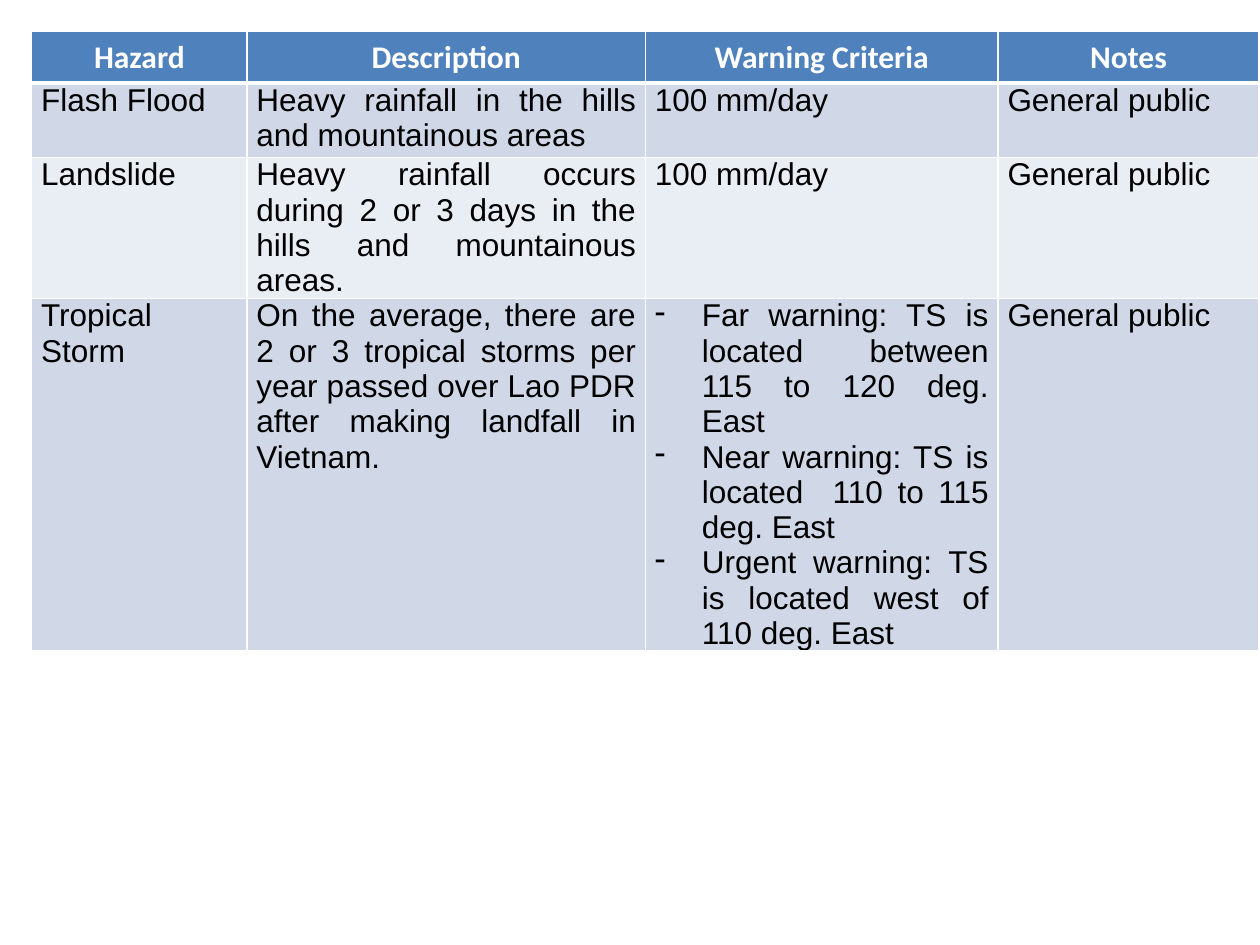
import pptx
import pptx.dml.color
import pptx.enum.text
import pptx.oxml
import pptx.oxml.ns
import pptx.util
from lxml import etree

Cm = pptx.util.Cm
Pt = pptx.util.Pt
Align = pptx.enum.text.PP_ALIGN
qn = pptx.oxml.ns.qn

WIDTHS = [4.34, 8.03, 7.11, 5.26]
HEIGHTS = [1.02, 1.5, 1.78, 5.36]
ROWS = [
    ["Hazard", "Description", "Warning Criteria", "Notes"],
    ["Flash Flood", "Heavy rainfall in the hills and mountainous areas",
     "100 mm/day", "General public"],
    ["Landslide",
     "Heavy rainfall occurs during 2 or 3 days in the hills and mountainous areas.",
     "100 mm/day", "General public"],
    ["Tropical Storm",
     "On the average, there are 2 or 3 tropical storms per year passed over "
     "Lao PDR after making landfall in Vietnam.",
     ["Far warning: TS is located between 115 to 120 deg. East",
      "Near warning: TS is located  110 to 115 deg. East",
      "Urgent warning: TS is located west of 110 deg. East"],
     "General public"],
]


def color(code):
    return pptx.dml.color.RGBColor.from_string(code)


def write(frame, text, font="Arial", size=18, ink="000000", bold=False,
          align=Align.JUSTIFY):
    """Fill a text frame; a list of strings becomes dashed points."""
    dashed = isinstance(text, list)
    for i, line in enumerate(text if dashed else [text]):
        para = frame.paragraphs[0] if i == 0 else frame.add_paragraph()
        para.alignment = align
        run = para.add_run()
        run.text = line
        run.font.name = font
        run.font.size = Pt(size)
        run.font.bold = bold
        run.font.color.rgb = color(ink)
        if dashed:
            dash(para)


def dash(para, indent=0.95):
    props = para._p.get_or_add_pPr()
    props.set("marL", str(Cm(indent)))
    props.set("indent", str(-Cm(indent)))
    etree.SubElement(props, qn("a:buChar")).set("char", "-")


def border(cell, code, **widths):
    """Draw cell edges; widths are points keyed by L, R, T, B in that order."""
    props = cell._tc.get_or_add_tcPr()
    for side, width in widths.items():
        line = etree.SubElement(props, qn("a:ln" + side))
        line.set("w", str(Pt(width)))
        fill = etree.SubElement(line, qn("a:solidFill"))
        etree.SubElement(fill, qn("a:srgbClr")).set("val", code)


class Deck:
    head = "4F81BD"
    bands = ["D0D8E8", "E9EDF4"]
    white = "FFFFFF"

    def __init__(self, width, height):
        self.file = pptx.Presentation()
        self.file.slide_width = Cm(width)
        self.file.slide_height = Cm(height)
        self.slide = self.file.slides.add_slide(self.file.slide_layouts[6])

    def table(self, left, top, widths, heights, rows):
        table = self.slide.shapes.add_table(
            len(rows), len(widths), Cm(left), Cm(top),
            Cm(sum(widths)), Cm(sum(heights))).table
        for col, width in zip(table.columns, widths):
            col.width = Cm(width)
        for r, (row, height) in enumerate(zip(rows, heights)):
            table.rows[r].height = Cm(height)
            for c, text in enumerate(row):
                self.cell(table.cell(r, c), text, r)

    def cell(self, cell, text, row):
        border(cell, self.white, L=1, R=1, T=3 if row == 1 else 1,
               B=3 if row == 0 else 1)
        cell.fill.solid()
        if row == 0:
            cell.fill.fore_color.rgb = color(self.head)
            write(cell.text_frame, text, font="Calibri", ink=self.white,
                  bold=True, align=Align.CENTER)
        else:
            cell.fill.fore_color.rgb = color(self.bands[(row - 1) % 2])
            cell.margin_left = cell.margin_right = Cm(0.19)
            cell.margin_top = cell.margin_bottom = 0
            write(cell.text_frame, text)


def main():
    deck = Deck(25.4, 19.05)
    deck.table(0.64, 0.64, WIDTHS, HEIGHTS, ROWS)
    deck.file.save("out.pptx")


if __name__ == "__main__":
    main()
